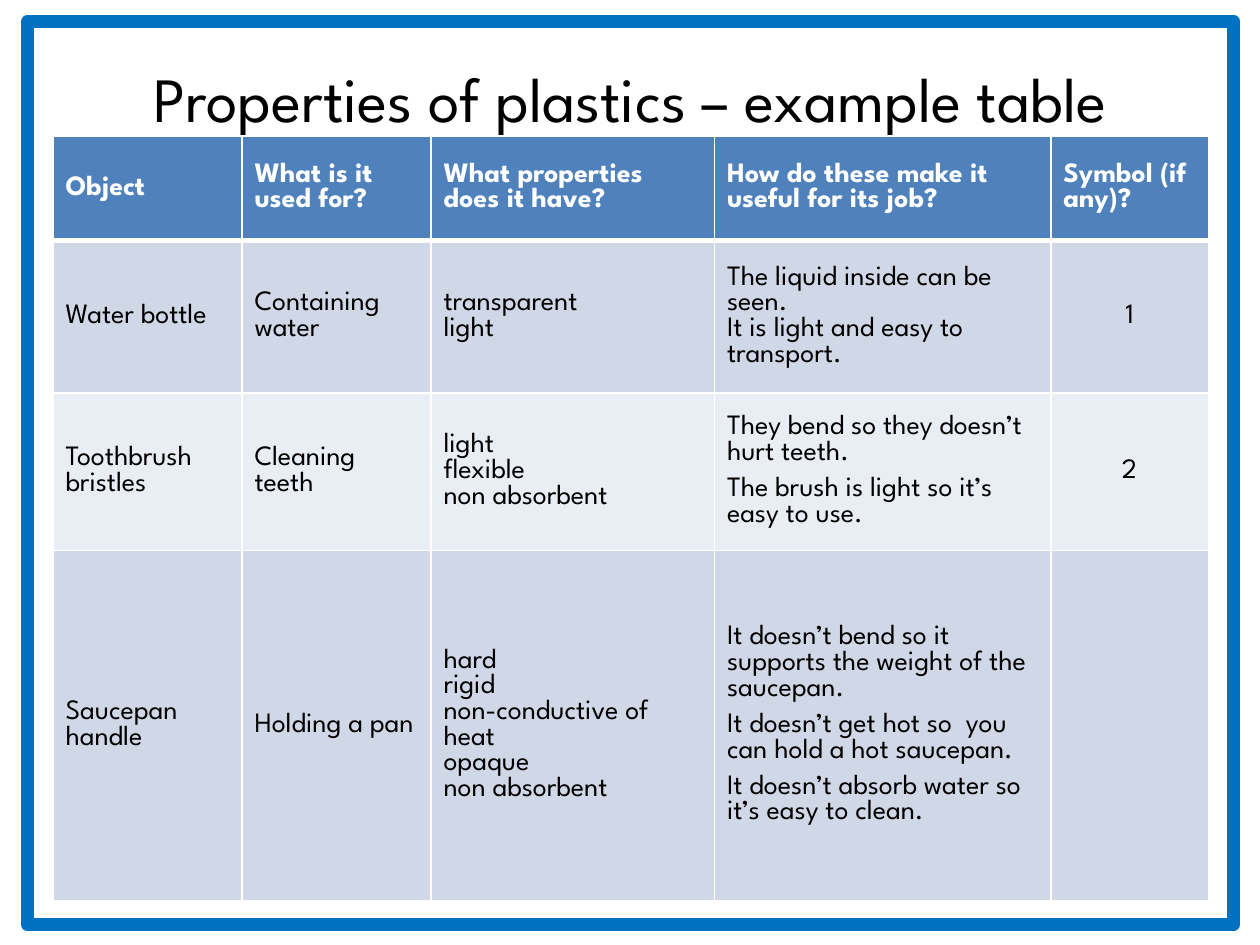
from lxml import etree
from pptx import Presentation
from pptx.dml.color import RGBColor
from pptx.enum.shapes import MSO_SHAPE as Shape
from pptx.enum.text import MSO_ANCHOR as Anchor, PP_ALIGN as Align
from pptx.oxml.ns import qn
from pptx.util import Inches, Pt

FONT = "League Spartan"
TITLE = "Properties of plastics – example table"
HEADINGS = [
    "Object",
    "What is it used for?",
    "What properties does it have?",
    "How do these make it useful for its job?",
    "Symbol (if any)?",
]
# Each cell is a list of paragraphs.
OBJECTS = [
    [["Water bottle"], ["Containing water"], ["transparent", "light"],
     ["The liquid inside can be seen.", "It is light and easy to transport."],
     ["1"]],
    [["Toothbrush bristles"], ["Cleaning teeth"],
     ["light", "flexible", "non absorbent"],
     ["They bend so they doesn’t hurt teeth.",
      "The brush is light so it’s easy to use."],
     ["2"]],
    [["Saucepan handle"], ["Holding a pan"],
     ["hard", "rigid", "non-conductive of heat", "opaque", "non absorbent"],
     ["It doesn’t bend so it supports the weight of the saucepan.",
      "It doesn’t get hot so  you can hold a hot saucepan.",
      "It doesn’t absorb water so it’s easy to clean."],
     []],
]
COLUMN_WIDTHS = [1.5, 1.5, 2.25, 2.67, 1.25]
ROW_HEIGHTS = [0.83, 1.21, 1.22, 2.78]
REASON_COLUMN, SYMBOL_COLUMN = 3, 4
SPACED_ROWS = (2, 3)
HEADER_FILL, BAND_FILLS = "4F81BD", ["E9EDF4", "D0D8E8"]


def color(value):
    return RGBColor.from_string(value)


def write(frame, lines, size, ink, bold=False, align=Align.LEFT, gap=0):
    for index, line in enumerate(lines):
        para = frame.paragraphs[0] if index == 0 else frame.add_paragraph()
        para.text = line
        para.alignment = align
        if index and gap:
            para.space_before = Pt(gap)
        font = para.font
        font.name, font.size, font.bold = FONT, Pt(size), bold
        font.color.rgb = color(ink)


def set_borders(cell, **widths):
    """Draw white cell edges; widths are points keyed by L, R, T, B."""
    props = cell._tc.get_or_add_tcPr()
    for index, side in enumerate("LRTB"):
        line = etree.Element(qn(f"a:ln{side}"), w=str(Pt(widths.get(side, 1))))
        fill = etree.SubElement(line, qn("a:solidFill"))
        etree.SubElement(fill, qn("a:srgbClr"), val="FFFFFF")
        props.insert(index, line)


deck = Presentation()
deck.slide_width, deck.slide_height = Inches(10), Inches(7.5)
page = deck.slides.add_slide(deck.slide_layouts[6])

border = page.shapes.add_shape(
    Shape.RECTANGLE, Inches(0.22), Inches(0.17), Inches(9.57), Inches(7.17))
border.shadow.inherit = False
border.fill.background()
border.line.color.rgb = color("0070C0")
border.line.width = Pt(7.5)

title = page.shapes.add_textbox(
    Inches(0.17), Inches(0.42), Inches(9.67), Inches(0.7)).text_frame
title.word_wrap = True
title.vertical_anchor = Anchor.MIDDLE
write(title, [TITLE], 36, "000000", align=Align.CENTER)

rows = [[[heading] for heading in HEADINGS]] + OBJECTS
table = page.shapes.add_table(
    len(rows), len(HEADINGS), Inches(0.42), Inches(1.08),
    Inches(sum(COLUMN_WIDTHS)), Inches(sum(ROW_HEIGHTS))).table
for column, width in zip(table.columns, COLUMN_WIDTHS):
    column.width = Inches(width)
for row, height in zip(table.rows, ROW_HEIGHTS):
    row.height = Inches(height)

for r, row in enumerate(rows):
    header = r == 0
    for c, lines in enumerate(row):
        cell = table.cell(r, c)
        cell.vertical_anchor = Anchor.MIDDLE
        cell.fill.solid()
        cell.fill.fore_color.rgb = color(HEADER_FILL if header else BAND_FILLS[r % 2])
        set_borders(cell, T=3 if r == 1 else 1, B=3 if header else 1)
        centred = c == SYMBOL_COLUMN and not header
        spaced = c == REASON_COLUMN and r in SPACED_ROWS
        write(cell.text_frame, lines, 16, "FFFFFF" if header else "000000",
              bold=header, align=Align.CENTER if centred else Align.LEFT,
              gap=6 if spaced else 0)

deck.save("out.pptx")
